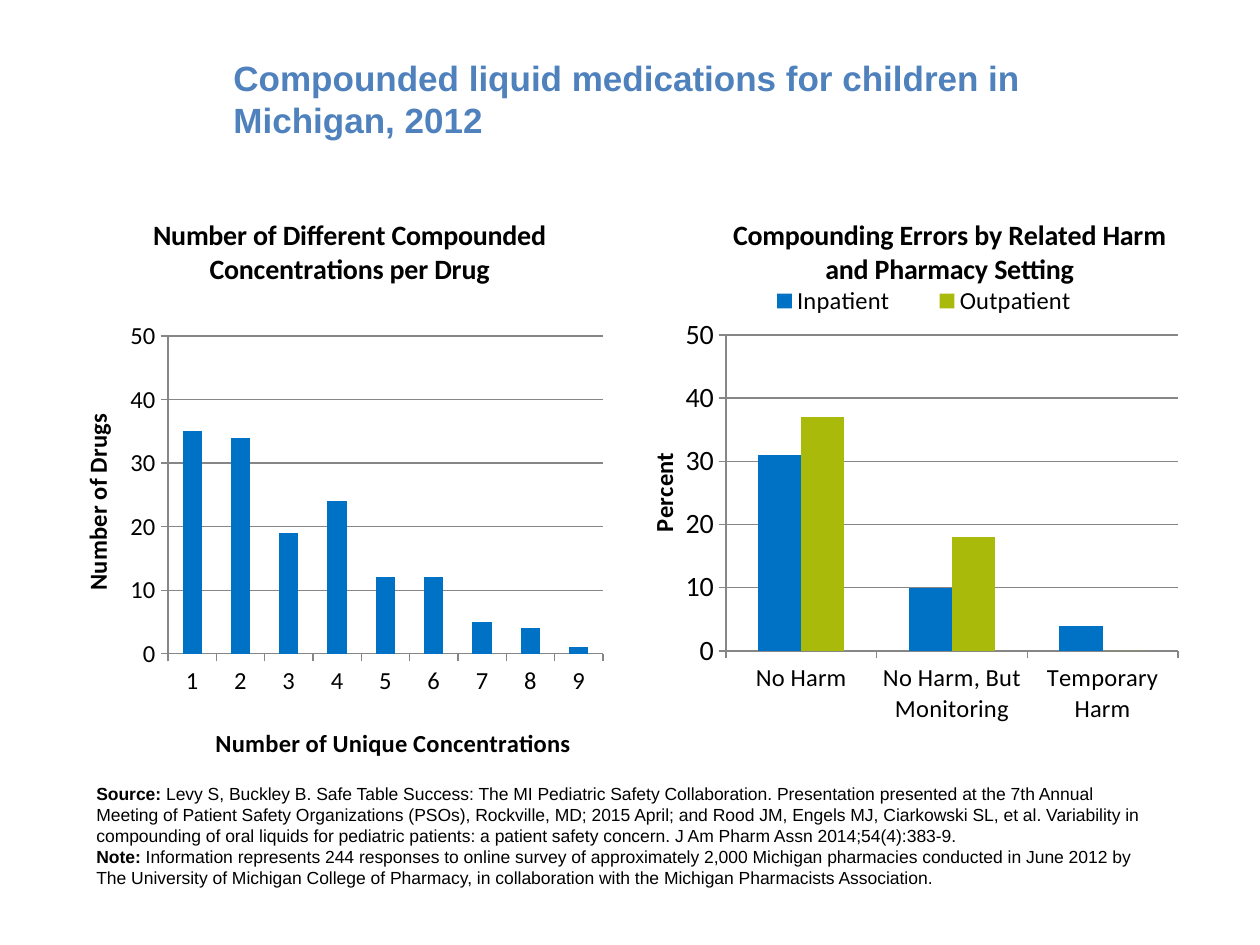
"""Build a slide with two column charts on compounded liquid medications."""
from dataclasses import dataclass
from typing import Any, NamedTuple, Optional

from lxml.etree import SubElement
from pptx import Presentation
from pptx.chart.data import CategoryChartData
from pptx.dml.color import RGBColor
from pptx.enum.chart import XL_CHART_TYPE, XL_LEGEND_POSITION, XL_TICK_MARK
from pptx.enum.text import MSO_ANCHOR
from pptx.oxml import parse_xml
from pptx.oxml.ns import nsdecls, qn
from pptx.util import Emu, Pt

SCALE = 914400 / 126


class Box(NamedTuple):
    x: int
    y: int
    w: int = 0
    h: int = 0


class Label(NamedTuple):
    text: str
    spot: Box


class Run(NamedTuple):
    text: str
    bold: bool


class Row(NamedTuple):
    name: str
    vals: tuple[int, ...]
    color: str


@dataclass(frozen=True)
class Theme:
    head: str = "4F81BD"
    ink: str = "000000"
    grid: str = "868686"
    blue: str = "0072C6"
    green: str = "AABA0A"
    sans: str = "Arial"
    face: str = "Calibri"
    large: int = 20
    title: int = 16
    label: int = 14
    small: int = 10


@dataclass(frozen=True)
class Graph:
    box: Box
    plot: Box
    title: Label
    side: Label
    cats: tuple[str, ...]
    rows: tuple[Row, ...]
    size: int
    base: Optional[Label] = None
    key: Optional[Box] = None


THEME = Theme()
GRAPHS = (
    Graph(
        Box(63, 202, 567, 567), Box(168, 336, 435, 318),
        Label("Number of Different Compounded Concentrations per Drug", Box(148, 211)),
        Label("Number of Drugs", Box(76, 409)),
        tuple("123456789"),
        (Row("Series 1", (35, 34, 19, 24, 12, 12, 5, 4, 1), THEME.blue),),
        THEME.label,
        base=Label("Number of Unique Concentrations", Box(211, 722)),
    ),
    Graph(
        Box(630, 202, 567, 529), Box(726, 335, 452, 316),
        Label("Compounding Errors by Related Harm and Pharmacy Setting", Box(728, 211)),
        Label("Percent", Box(642, 448)),
        ("No Harm", "No Harm, But Monitoring", "Temporary Harm"),
        (Row("Inpatient", (31, 10, 4), THEME.blue),
         Row("Outpatient", (37, 18, 0), THEME.green)),
        THEME.title,
        key=Box(735, 284, 378, 34),
    ),
)
NOTES = (
    (Run("Source: ", True),
     Run("Levy S, Buckley B. Safe Table Success: The MI Pediatric Safety Collaboration. "
         "Presentation presented at the 7th Annual Meeting of Patient Safety Organizations "
         "(PSOs), Rockville, MD; 2015 April; and Rood JM, Engels MJ, Ciarkowski SL, et al. "
         "Variability in compounding of oral liquids for pediatric patients: a patient safety "
         "concern. J Am Pharm Assn 2014;54(4):383-9.", False)),
    (Run("Note:", True),
     Run(" Information represents 244 responses to online survey of approximately 2,000 "
         "Michigan pharmacies conducted in June 2012 by The University of Michigan College of "
         "Pharmacy, in collaboration with the Michigan Pharmacists Association.", False)),
)


def px(num: int) -> Emu:
    """Turn px into EMU."""
    return Emu(round(num * SCALE))


def apply(item: Any, form: dict[str, Any]) -> None:
    """Set each named value on the item."""
    for name, val in form.items():
        setattr(item, name, val)


def style(font: Any, size: int, face: str, bold: bool = False, color: str = THEME.ink) -> None:
    """Format a font."""
    apply(font, {"size": Pt(size), "name": face, "bold": bold})
    font.color.rgb = RGBColor.from_string(color)


def write(slide: Any, box: Box, paras: tuple[tuple[Run, ...], ...], size: int,
          color: str, anchor: Any) -> None:
    """Draw a text box of styled runs."""
    frame = slide.shapes.add_textbox(*map(px, box)).text_frame
    apply(frame, {"word_wrap": True, "vertical_anchor": anchor})
    for num, runs in enumerate(paras):
        para = frame.add_paragraph() if num else frame.paragraphs[0]
        for part in runs:
            run = para.add_run()
            run.text = part.text
            style(run.font, size, THEME.sans, part.bold, color)


def place(node: Any, spot: Box, area: Box, inner: bool = False) -> None:
    """Give a chart part a fixed place within the chart area."""
    for old in node.findall(qn("c:layout")):
        node.remove(old)
    layout = parse_xml(f"<c:layout {nsdecls('c')}><c:manualLayout/></c:layout>")
    form = {"layoutTarget": "inner"} if inner else {}
    form |= {"xMode": "edge", "yMode": "edge",
             "x": (spot.x - area.x) / area.w, "y": (spot.y - area.y) / area.h}
    if spot.w:
        form |= {"w": spot.w / area.w, "h": spot.h / area.h}
    for name, val in form.items():
        text = val if isinstance(val, str) else f"{val:.4f}"
        SubElement(layout[0], qn(f"c:{name}")).set("val", text)
    over = node.find(qn("c:overlay"))
    if over is None:
        node.insert(0, layout)
    else:
        over.addprevious(layout)


def name_part(title: Any, label: Label, area: Box, size: int, turn: int = 0) -> None:
    """Write and place a chart or axis title."""
    frame = title.text_frame
    frame.text = label.text
    style(frame.paragraphs[0].runs[0].font, size, THEME.face, True)
    frame._txBody.bodyPr.set("rot", str(turn * 60000))
    frame._txBody.bodyPr.set("vert", "horz")
    place(title._element, label.spot, area)


def draw(slide: Any, graph: Graph) -> None:
    """Draw one column chart."""
    data = CategoryChartData(number_format="0")
    data.categories = graph.cats
    for row in graph.rows:
        data.add_series(row.name, row.vals)
    chart = slide.shapes.add_chart(
        XL_CHART_TYPE.COLUMN_CLUSTERED, *map(px, graph.box), data).chart
    style(chart.font, THEME.small, THEME.sans)
    apply(chart, {"has_title": True, "has_legend": graph.key is not None})
    name_part(chart.chart_title, graph.title, graph.box, THEME.title)
    apply(chart.plots[0], {"gap_width": 150, "overlap": 0, "vary_by_categories": False})
    for row, bars in zip(graph.rows, chart.plots[0].series):
        bars.format.fill.solid()
        bars.format.fill.fore_color.rgb = RGBColor.from_string(row.color)
    cat, val = chart.category_axis, chart.value_axis
    apply(val, {"minimum_scale": 0, "maximum_scale": 50, "major_unit": 10,
                "has_major_gridlines": True})
    apply(val.tick_labels, {"number_format": "0", "number_format_is_linked": False})
    for axis, size in ((cat, THEME.label), (val, graph.size)):
        axis.major_tick_mark = XL_TICK_MARK.OUTSIDE
        style(axis.tick_labels.font, size, THEME.face)
    for part in (cat, val, val.major_gridlines):
        part.format.line.width = Pt(0.75)
        part.format.line.color.rgb = RGBColor.from_string(THEME.grid)
    name_part(val.axis_title, graph.side, graph.box, THEME.label, -90)
    if graph.base:
        name_part(cat.axis_title, graph.base, graph.box, THEME.label)
    if graph.key:
        key = chart.legend
        apply(key, {"position": XL_LEGEND_POSITION.TOP, "include_in_layout": False})
        style(key.font, THEME.label, THEME.face)
        place(key._element, graph.key, graph.box)
    place(chart._chartSpace.find(f".//{qn('c:plotArea')}"), graph.plot, graph.box, True)


def main() -> None:
    """Build and save the slide."""
    deck = Presentation()
    apply(deck, {"slide_width": px(1260), "slide_height": px(945)})
    slide = deck.slides.add_slide(deck.slide_layouts[6])
    head = Run("Compounded liquid medications for children in Michigan, 2012", True)
    write(slide, Box(221, 38, 977, 120), ((head,),), THEME.large, THEME.head, MSO_ANCHOR.MIDDLE)
    write(slide, Box(84, 777, 1071, 118), NOTES, THEME.small, THEME.ink, MSO_ANCHOR.TOP)
    for graph in GRAPHS:
        draw(slide, graph)
    deck.save("out.pptx")


if __name__ == "__main__":
    main()
